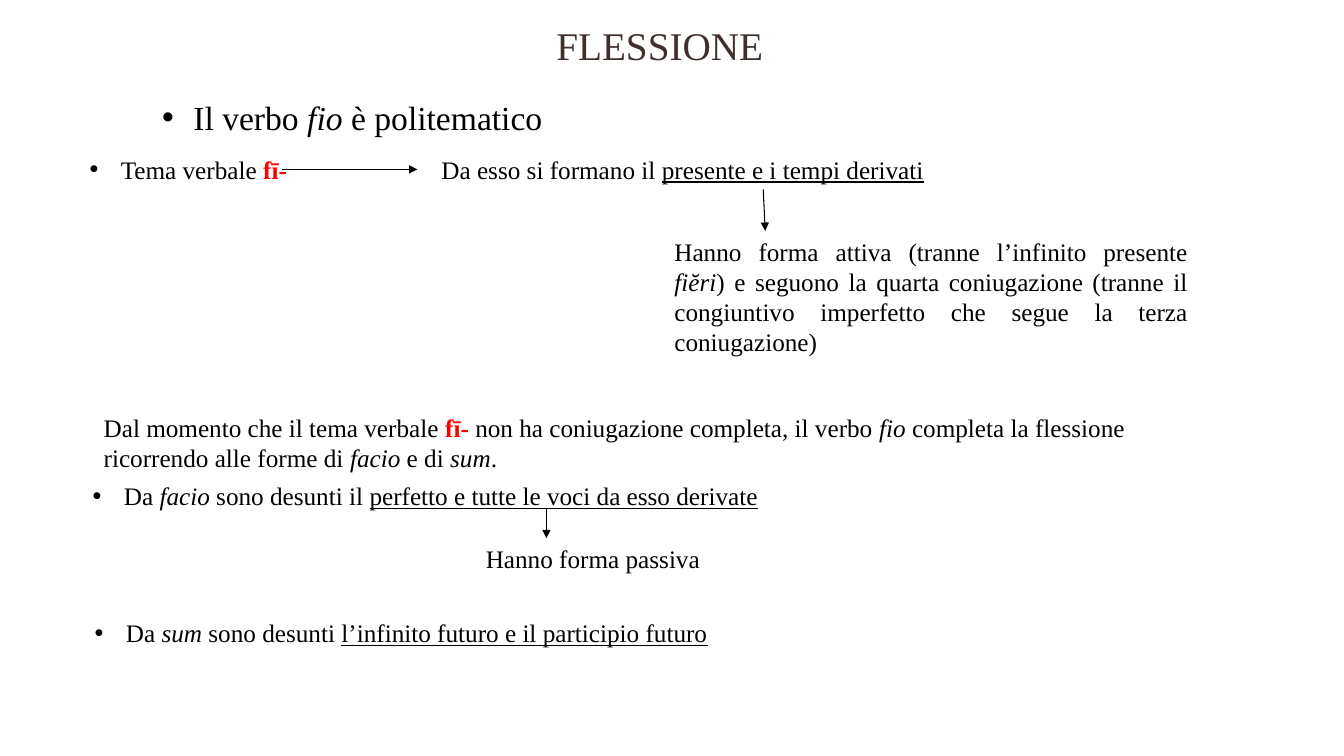
from dataclasses import dataclass

from lxml import etree
from pptx import Presentation
from pptx.dml.color import RGBColor
from pptx.enum import shapes, text
from pptx.oxml.ns import qn
from pptx.util import Inches, Pt


@dataclass(frozen=True)
class Theme:
    font: str = "Times New Roman"
    ink: RGBColor = RGBColor(0x00, 0x00, 0x00)
    title_ink: RGBColor = RGBColor(0x40, 0x30, 0x2B)
    stem_ink: RGBColor = RGBColor(0xFF, 0x00, 0x00)
    title: int = 28
    lead: int = 24
    body: int = 18
    line: float = 0.75
    indent: float = 0.31


theme = Theme()


def add_text(s, box, runs, size=theme.body, color=theme.ink, bullet=False, align=None):
    """Add a one-paragraph text box; each run is (text, style), style being "", "i", "u" or "stem"."""
    tf = s.shapes.add_textbox(*map(Inches, box)).text_frame
    tf.word_wrap = True
    tf.auto_size = text.MSO_AUTO_SIZE.SHAPE_TO_FIT_TEXT
    p = tf.paragraphs[0]
    p.alignment = align
    if bullet:
        pPr = p._p.get_or_add_pPr()
        pPr.set("marL", str(Inches(theme.indent)))
        pPr.set("indent", str(-Inches(theme.indent)))
        etree.SubElement(pPr, qn("a:buFont")).set("typeface", "Arial")
        etree.SubElement(pPr, qn("a:buChar")).set("char", "•")
    for words, style in runs:
        r = p.add_run()
        r.text = words
        r.font.name = theme.font
        r.font.size = Pt(size)
        r.font.color.rgb = theme.stem_ink if style == "stem" else color
        r.font.bold = style == "stem"
        r.font.italic = style == "i"
        r.font.underline = style == "u"


prs = Presentation()
prs.slide_width = Inches(13.33)
prs.slide_height = Inches(7.5)
s = prs.slides.add_slide(prs.slide_layouts[6])

# Title and lead statement
add_text(s, (5.42, 0.16, 7.01, 0.57), [("FLESSIONE", "")], theme.title, theme.title_ink)
add_text(s, (1.51, 0.91, 7.71, 0.5),
         [("Il verbo ", ""), ("fio", "i"), (" è politematico", "")], theme.lead, bullet=True)

# Bulleted sources of the forms
bullets = [
    ((0.79, 1.48, 3.49, 0.4), [("Tema verbale ", ""), ("fī-", "stem")]),
    ((0.82, 4.72, 11.62, 0.4), [("Da ", ""), ("facio ", "i"), ("sono desunti il ", ""),
                                ("perfetto e tutte le voci da esso derivate", "u")]),
    ((0.84, 6.08, 10.5, 0.4), [("Da ", ""), ("sum", "i"), (" sono desunti ", ""),
                               ("l’infinito futuro e il participio futuro", "u")]),
]
for box, runs in bullets:
    add_text(s, box, runs, bullet=True)

# Explanations
add_text(s, (4.28, 1.48, 5.27, 0.4),
         [("Da esso si formano il ", ""), ("presente e i tempi derivati", "u")])
add_text(s, (6.59, 2.29, 5.29, 1.31),
         [("Hanno forma attiva (tranne l’infinito presente ", ""), ("fiĕri", "i"),
          (") e seguono la quarta coniugazione (tranne il congiuntivo imperfetto "
           "che segue la terza coniugazione)", "")],
         align=text.PP_ALIGN.JUSTIFY)
add_text(s, (0.93, 4.04, 11.18, 0.71),
         [("Dal momento che il tema verbale ", ""), ("fī- ", "stem"),
          ("non ha coniugazione completa, il verbo ", ""), ("fio", "i"),
          (" completa la flessione ricorrendo alle forme di ", ""), ("facio", "i"),
          (" e di ", ""), ("sum", "i"), (".", "")])
add_text(s, (4.72, 5.34, 3.47, 0.4), [("Hanno forma passiva", "")])

# Arrows from each source to its explanation
arrows = [(2.8, 1.68, 4.14, 1.68), (7.57, 1.88, 7.59, 2.29), (5.42, 5.05, 5.42, 5.34)]
for ends in arrows:
    arrow = s.shapes.add_connector(shapes.MSO_CONNECTOR.STRAIGHT, *map(Inches, ends))
    arrow.line.color.rgb = theme.ink
    arrow.line.width = Pt(theme.line)
    etree.SubElement(arrow.line._get_or_add_ln(), qn("a:tailEnd")).set("type", "triangle")
    etree.SubElement(arrow._element.spPr, qn("a:effectLst"))

prs.save("out.pptx")
